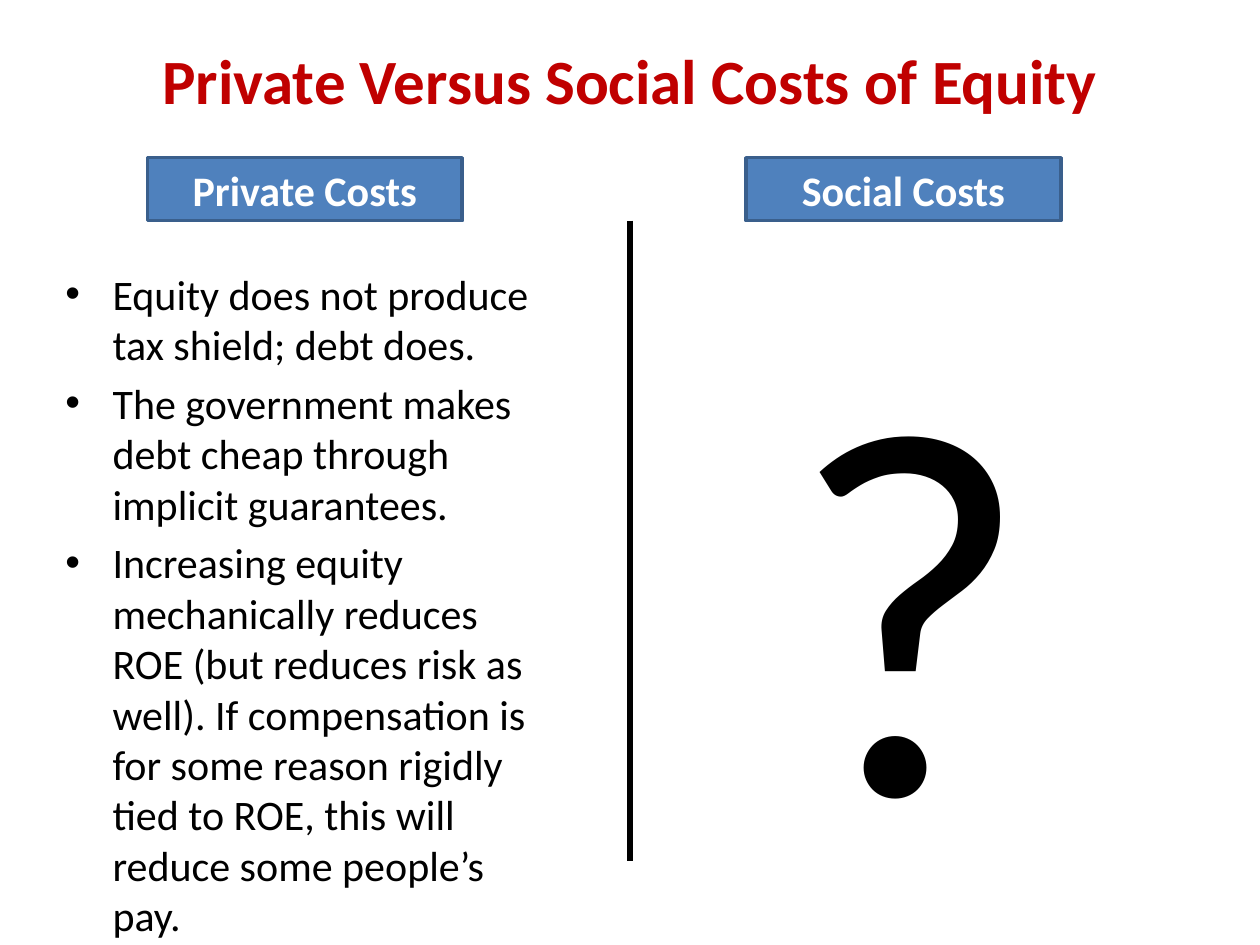
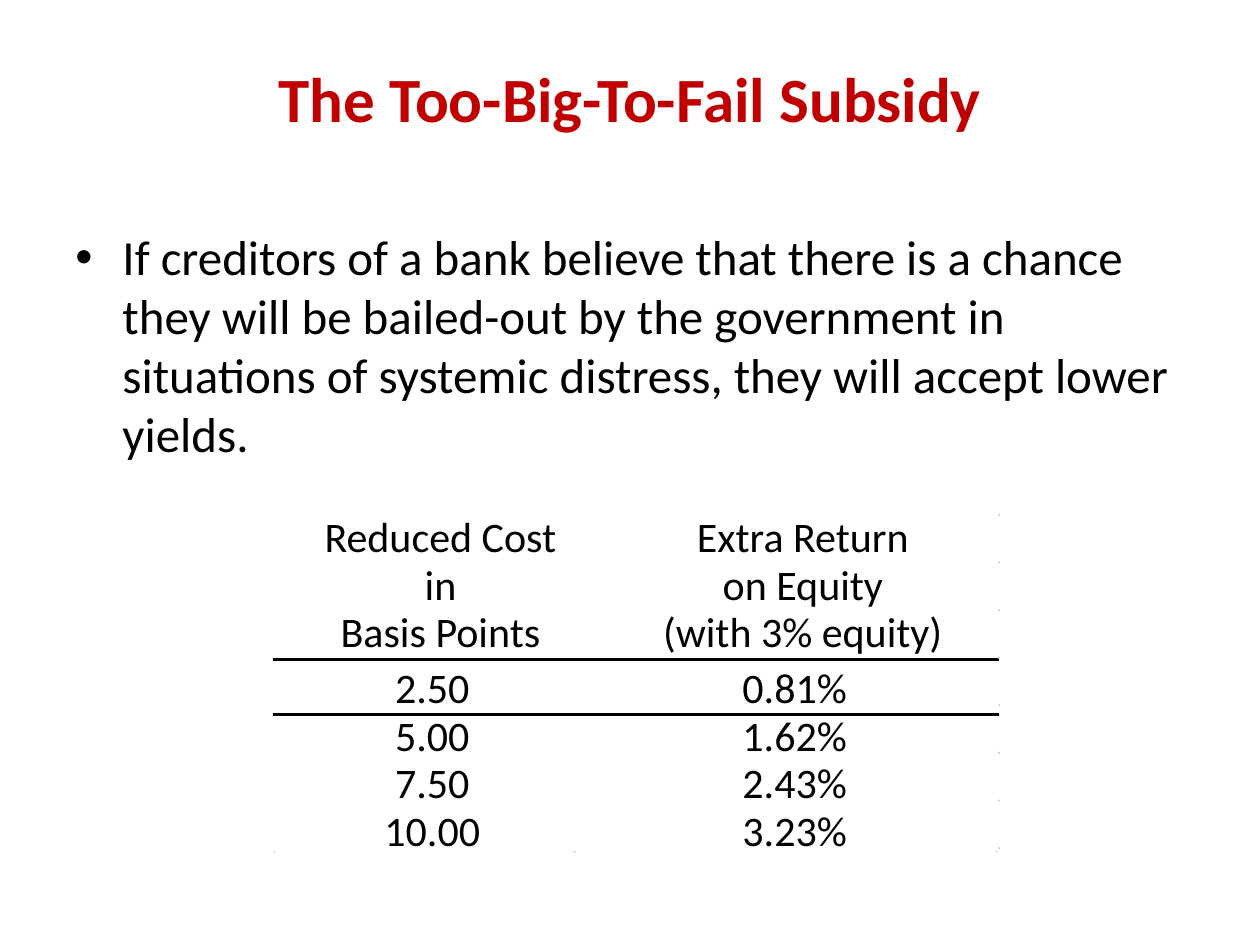
from dataclasses import dataclass, replace

import lxml.etree
import pptx
import pptx.dml.color
import pptx.enum.shapes
import pptx.enum.text
import pptx.oxml.ns
import pptx.util

Cm = pptx.util.Cm
Pt = pptx.util.Pt
ALIGN = pptx.enum.text.PP_ALIGN
ANCHOR = pptx.enum.text.MSO_ANCHOR

BLACK, WHITE, RED = "000000", "FFFFFF", "C00000"
BLUE, DARK_BLUE, GRID_GREY = "4F81BD", "3A5F8C", "D0D7E5"


@dataclass(frozen=True)
class Box:
    left: float
    top: float
    width: float
    height: float


@dataclass(frozen=True)
class TextStyle:
    size: float
    color: str = BLACK
    bold: bool = False
    align: ALIGN = ALIGN.LEFT
    bullet: bool = False
    line_pitch: float | None = None


TITLE = TextStyle(36, RED, bold=True, align=ALIGN.CENTER)
HEADING = TextStyle(24, WHITE, bold=True, align=ALIGN.CENTER)
BULLETS = TextStyle(24, bullet=True)
LARGE_BULLETS = replace(BULLETS, size=28)
QUESTION = TextStyle(300)
CELL = TextStyle(24, align=ALIGN.CENTER, line_pitch=27.2)

COST_HEADINGS = {"Private Costs": 2.97, "Social Costs": 15.04}
PRIVATE_COSTS = [
    "Equity does not produce tax shield; debt does.",
    "The government makes debt cheap through implicit guarantees.",
    "Increasing equity mechanically reduces ROE (but reduces risk as well). "
    "If compensation is for some reason rigidly tied to ROE, "
    "this will reduce some people’s pay.",
]
SUBSIDY = [
    "If creditors of a bank believe that there is a chance they will be "
    "bailed-out by the government in situations of systemic distress, "
    "they will accept lower yields."
]
RETURNS = [
    ("Reduced Cost in\nBasis Points", "Extra Return\non Equity\n(with 3% equity)"),
    ("2.50", "0.81%"),
    ("5.00", "1.62%"),
    ("7.50", "2.43%"),
    ("10.00", "3.23%"),
]
RETURNS_BOX = Box(5.51, 10.39, 14.61, 6.9)
COLUMN_WIDTHS = [6.05, 8.56]
ROW_HEIGHTS = [2.9, 1.12, 0.96, 0.96, 0.96]


def rgb(code: str) -> pptx.dml.color.RGBColor:
    return pptx.dml.color.RGBColor.from_string(code)


def place(box: Box) -> tuple:
    return Cm(box.left), Cm(box.top), Cm(box.width), Cm(box.height)


def add_xml(parent, tag: str, **attributes: str):
    return lxml.etree.SubElement(parent, pptx.oxml.ns.qn(tag), attributes)


def write(frame, lines: list[str], style: TextStyle) -> None:
    frame.text = "\n".join(lines)
    for paragraph in frame.paragraphs:
        paragraph.alignment = style.align
        if style.line_pitch:
            paragraph.line_spacing = Pt(style.line_pitch)
        if style.bullet:
            paragraph.space_before = Pt(style.size * 0.2)
            properties = paragraph._p.get_or_add_pPr()
            properties.set("marL", str(Cm(0.95)))
            properties.set("indent", str(-Cm(0.95)))
            add_xml(properties, "a:buFont", typeface="Arial")
            add_xml(properties, "a:buChar", char="•")
        font = paragraph.font
        font.name, font.size, font.bold = "Calibri", Pt(style.size), style.bold
        font.color.rgb = rgb(style.color)


def add_text(slide, box: Box, lines: list[str], style: TextStyle,
             anchor: ANCHOR = ANCHOR.TOP, wrap: bool = True) -> None:
    frame = slide.shapes.add_textbox(*place(box)).text_frame
    frame.word_wrap = wrap
    frame.vertical_anchor = anchor
    write(frame, lines, style)


def add_title(slide, title: str, top: float) -> None:
    add_text(slide, Box(1.27, top, 22.86, 3.18), [title], TITLE, ANCHOR.MIDDLE)


def add_rectangle(slide, box: Box, fill: str):
    rectangle = slide.shapes.add_shape(
        pptx.enum.shapes.MSO_SHAPE.RECTANGLE, *place(box))
    rectangle.shadow.inherit = False
    rectangle.fill.solid()
    rectangle.fill.fore_color.rgb = rgb(fill)
    rectangle.line.fill.background()
    return rectangle


def add_cost_heading(slide, heading: str, left: float) -> None:
    banner = add_rectangle(slide, Box(left, 3.18, 6.35, 1.27), BLUE)
    banner.line.color.rgb = rgb(DARK_BLUE)
    banner.line.width = Pt(2)
    banner.text_frame.vertical_anchor = ANCHOR.MIDDLE
    write(banner.text_frame, [heading], HEADING)


def add_divider(slide) -> None:
    divider = slide.shapes.add_connector(
        pptx.enum.shapes.MSO_CONNECTOR.STRAIGHT,
        Cm(12.7), Cm(4.45), Cm(12.7), Cm(17.35))
    divider.line.color.rgb = rgb(BLACK)
    divider.line.width = Pt(3.25)
    add_xml(divider._element.spPr, "a:effectLst")


def draw_rule(cell, side: str) -> None:
    properties = cell._tc.get_or_add_tcPr()
    rule = add_xml(properties, side, w=str(Pt(1.75)))
    add_xml(add_xml(rule, "a:solidFill"), "a:srgbClr", val=BLACK)
    properties.insert(0, rule)


def add_returns_table(slide) -> None:
    table = slide.shapes.add_table(
        len(RETURNS), len(COLUMN_WIDTHS), *place(RETURNS_BOX)).table
    table.first_row = table.horz_banding = False
    for column, width in zip(table.columns, COLUMN_WIDTHS):
        column.width = Cm(width)
    for number, (row, height, entries) in enumerate(
            zip(table.rows, ROW_HEIGHTS, RETURNS)):
        row.height = Cm(height)
        for cell, entry in zip(row.cells, entries):
            cell.margin_top = cell.margin_bottom = cell.margin_right = 0
            cell.margin_left = Cm(0.36 if number else 0.69)
            cell.vertical_anchor = ANCHOR.BOTTOM
            cell.fill.background()
            write(cell.text_frame, entry.split("\n"), CELL)
            if number < 2:
                draw_rule(cell, "a:lnT" if number else "a:lnB")


def add_grid_marks(slide) -> None:
    right_edge = [(20.12, 10.36 + 0.96 * step) for step in range(8)]
    bottom_edge = [(left, 17.15) for left in (5.51, 11.56, 20.07)]
    for left, top in right_edge + bottom_edge:
        add_rectangle(slide, Box(left, top, 0.04, 0.04), GRID_GREY)


def build_costs(slide) -> None:
    add_title(slide, "Private Versus Social Costs of Equity", 0)
    add_text(slide, Box(1.07, 5.28, 10.36, 12.57), PRIVATE_COSTS, BULLETS)
    add_divider(slide)
    add_text(slide, Box(15.65, 5.33, 5.46, 13.08), ["?"], QUESTION, wrap=False)
    for heading, left in COST_HEADINGS.items():
        add_cost_heading(slide, heading, left)


def build_subsidy(slide) -> None:
    add_title(slide, "The Too-Big-To-Fail Subsidy", 0.38)
    add_text(slide, Box(1.27, 4.45, 22.86, 5.5), SUBSIDY, LARGE_BULLETS)
    add_returns_table(slide)
    add_grid_marks(slide)


def main() -> None:
    deck = pptx.Presentation()
    deck.slide_width, deck.slide_height = Cm(25.4), Cm(19.05)
    for build in (build_costs, build_subsidy):
        build(deck.slides.add_slide(deck.slide_layouts[6]))
    deck.save("out.pptx")


if __name__ == "__main__":
    main()
